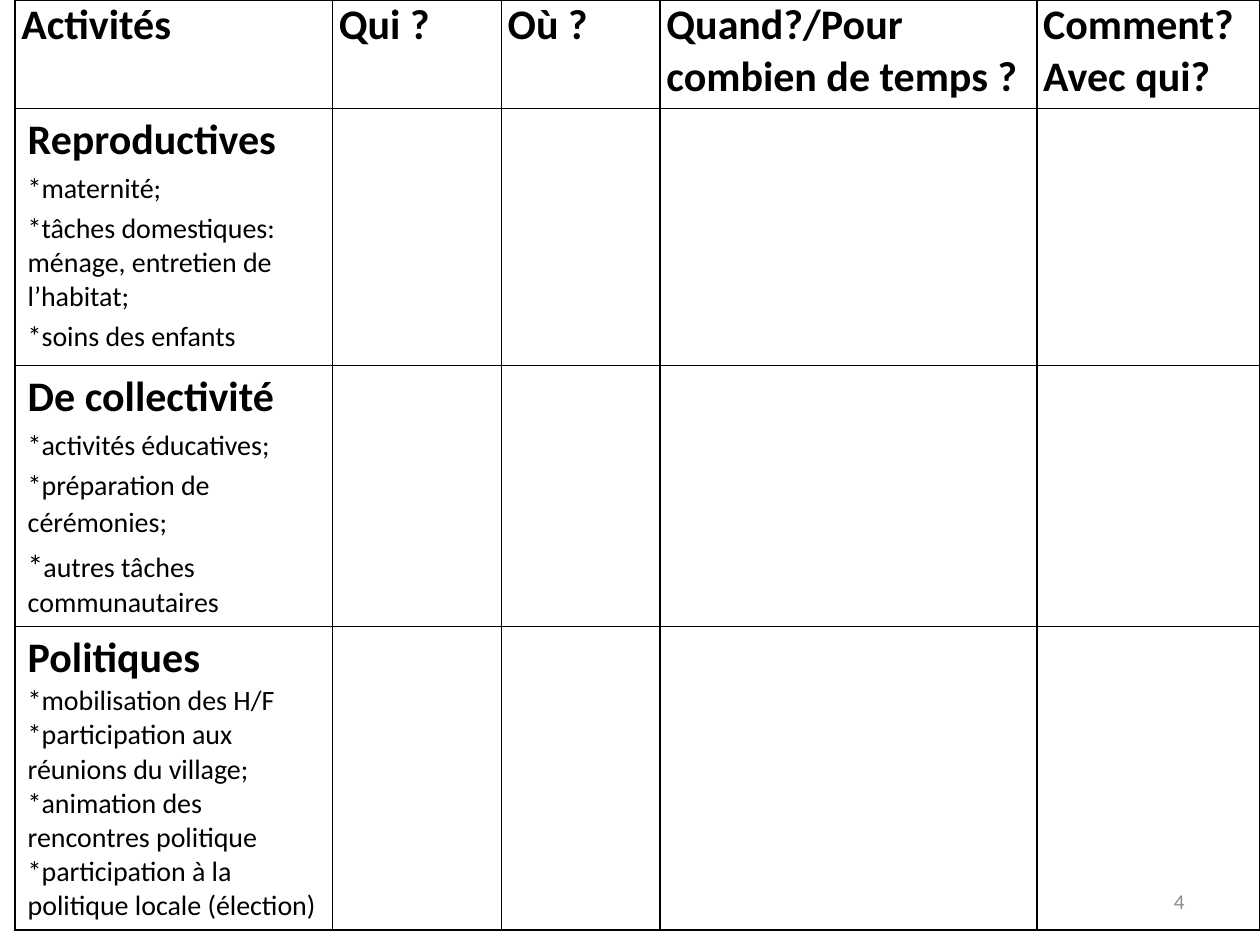
from dataclasses import dataclass

import lxml.etree
import pptx
import pptx.dml.color
import pptx.enum.text
import pptx.oxml.ns
import pptx.slide
import pptx.table
import pptx.text.text
import pptx.util


@dataclass(frozen=True)
class Theme:
    font: str = "Calibri"
    ink: str = "000000"
    paper: str = "FFFFFF"
    muted: str = "8C8C8C"
    heading: int = 24
    wide_mark: int = 18
    body: int = 16
    page_number: int = 12
    border: float = 1
    gap_share: float = 0.2  # space above an item, as a share of its type size


@dataclass(frozen=True)
class Span:
    text: str
    size: int


@dataclass(frozen=True)
class Activity:
    title: str
    items: tuple[tuple[Span, ...], ...]
    spaced: bool = True


THEME = Theme()
WIDTH, HEIGHT = 10, 7.5
TABLE_LEFT = 0.12
COLUMNS = (2.52, 1.34, 1.26, 2.99, 1.77)
ROWS = (0.86, 2.04, 2.03, 1.88)
HEADERS = ("Activités", "Qui\u00a0?", "Où\u00a0?",
           "Quand?/Pour combien de temps\u00a0? ", "Comment? Avec qui?")


def plain(*texts: str) -> tuple[tuple[Span, ...], ...]:
    """One body-size span for each item."""
    return tuple((Span(text, THEME.body),) for text in texts)


ACTIVITIES = (
    Activity("Reproductives", plain(
        "*maternité;",
        "*tâches domestiques: ménage, entretien de l’habitat;",
        "*soins des enfants")),
    Activity("De collectivité", (
        *plain("*activités éducatives;"),
        (Span("*préparation de cérémonies;", THEME.body), Span(" ", THEME.wide_mark)),
        (Span("*", THEME.wide_mark), Span("autres tâches communautaires", THEME.body)))),
    Activity("Politiques", plain(
        "*mobilisation des H/F",
        "*participation aux réunions\u00a0du village;",
        "*animation des rencontres politique",
        "*participation à la politique locale (élection)"), spaced=False),
)


def style(font: pptx.text.text.Font, size: int, color: str = THEME.ink,
          bold: bool = False) -> None:
    font.name, font.size, font.bold = THEME.font, pptx.util.Pt(size), bold
    font.color.rgb = pptx.dml.color.RGBColor.from_string(color)


def draw_borders(cell: pptx.table._Cell) -> None:
    """Rule all four sides; lines must precede the fill in the cell properties."""
    properties = cell._tc.get_or_add_tcPr()
    name = pptx.oxml.ns.qn
    for index, side in enumerate(("a:lnL", "a:lnR", "a:lnT", "a:lnB")):
        line = lxml.etree.Element(name(side), w=str(pptx.util.Pt(THEME.border)))
        fill = lxml.etree.SubElement(line, name("a:solidFill"))
        lxml.etree.SubElement(fill, name("a:srgbClr"), val=THEME.ink)
        properties.insert(index, line)


def write_header(cell: pptx.table._Cell, text: str) -> None:
    cell.margin_left = cell.margin_right = pptx.util.Inches(0.05)
    cell.margin_top = cell.margin_bottom = 0
    para = cell.text_frame.paragraphs[0]
    para.text = text
    para.alignment = pptx.enum.text.PP_ALIGN.JUSTIFY
    style(para.font, THEME.heading, bold=True)
    style(para.runs[0].font, THEME.heading, bold=True)


def write_activity(cell: pptx.table._Cell, activity: Activity) -> None:
    frame = cell.text_frame
    title = frame.paragraphs[0]
    title.text = activity.title
    style(title.font, THEME.heading, bold=True)
    style(title.runs[0].font, THEME.heading, bold=True)
    for item in activity.items:
        para = frame.add_paragraph()
        if activity.spaced:
            para.space_before = pptx.util.Pt(THEME.gap_share * item[0].size)
        for span in item:
            run = para.add_run()
            run.text = span.text
            style(run.font, span.size)


def draw_table(page: pptx.slide.Slide) -> None:
    inches = pptx.util.Inches
    table = page.shapes.add_table(
        len(ROWS), len(COLUMNS), inches(TABLE_LEFT), 0,
        inches(sum(COLUMNS)), inches(sum(ROWS))).table
    table.first_row = table.horz_banding = False
    for column, width in zip(table.columns, COLUMNS):
        column.width = inches(width)
    for row, height in zip(table.rows, ROWS):
        row.height = inches(height)
    for cell in table.iter_cells():
        cell.fill.solid()
        cell.fill.fore_color.rgb = pptx.dml.color.RGBColor.from_string(THEME.paper)
        draw_borders(cell)
    for column, text in enumerate(HEADERS):
        write_header(table.cell(0, column), text)
    for row, activity in enumerate(ACTIVITIES, start=1):
        write_activity(table.cell(row, 0), activity)


def draw_page_number(page: pptx.slide.Slide, number: int) -> None:
    inches = pptx.util.Inches
    box = page.shapes.add_textbox(inches(7.17), inches(6.95), inches(2.33), inches(0.4))
    frame = box.text_frame
    frame.word_wrap = True
    frame.vertical_anchor = pptx.enum.text.MSO_ANCHOR.MIDDLE
    para = frame.paragraphs[0]
    para.text = str(number)
    para.alignment = pptx.enum.text.PP_ALIGN.RIGHT
    style(para.font, THEME.page_number, THEME.muted)
    style(para.runs[0].font, THEME.page_number, THEME.muted)


def main() -> None:
    deck = pptx.Presentation()
    deck.slide_width = pptx.util.Inches(WIDTH)
    deck.slide_height = pptx.util.Inches(HEIGHT)
    page = deck.slides.add_slide(deck.slide_layouts[6])
    draw_table(page)
    draw_page_number(page, 4)
    deck.save("out.pptx")


if __name__ == "__main__":
    main()
